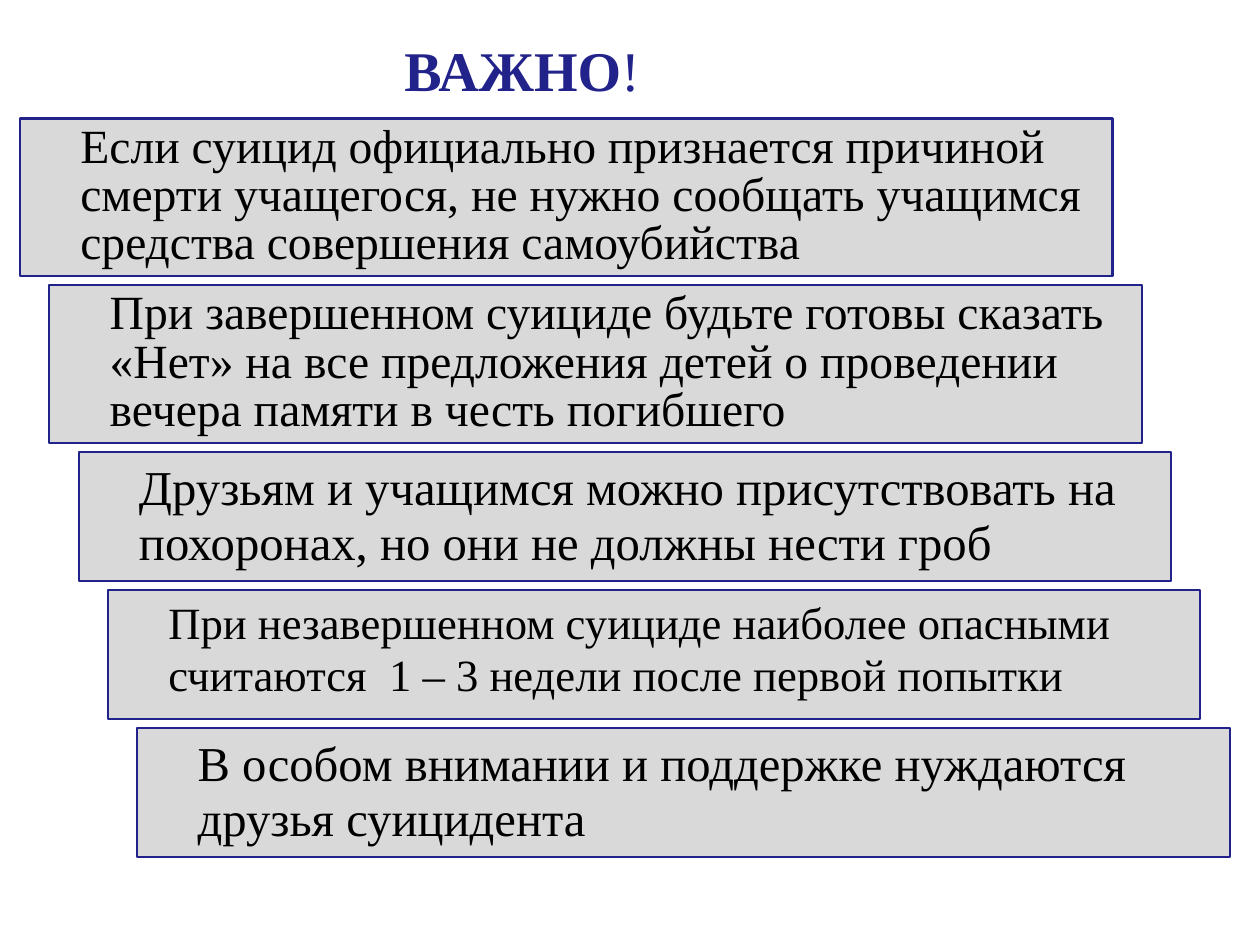
from lxml.etree import SubElement
from pptx import Presentation
from pptx.dml.color import RGBColor
from pptx.enum.shapes import MSO_SHAPE
from pptx.enum.text import MSO_ANCHOR, MSO_AUTO_SIZE, PP_ALIGN
from pptx.oxml.ns import qn
from pptx.util import Inches, Pt

COLORS = {"navy": "22228B", "gray": "CCCCCC", "black": "000000"}
FONT = "Times New Roman"
TITLE = [("ВАЖНО", True), ("!", False)]

# text, height, line spacing, tab size, text size
STEPS = [
    ("Если суицид официально признается причиной смерти учащегося, "
     "не нужно сообщать учащимся средства совершения самоубийства",
     1.25, 0.84, 27.2, 27.2),
    ("При завершенном суициде будьте готовы сказать «Нет» на все "
     "предложения детей о проведении вечера памяти в честь погибшего",
     1.25, 0.84, 27.2, 27.2),
    ("Друзьям и учащимся можно присутствовать на похоронах, "
     "но они не должны нести гроб", 1.02, 0.94, 29.6, 27.8),
    ("При незавершенном суициде наиболее опасными считаются  "
     "1 – 3 недели после первой попытки", 1.02, 0.95, 27.2, 25.5),
    ("В особом внимании и поддержке нуждаются друзья суицидента",
     1.02, 0.94, 29.6, 27.8),
]
FIRST, LAST = (0.16, 0.94), (1.09, 5.78)
WIDTH, INDENT, ALPHA = 8.67, 0.38, 74


def color(name):
    return RGBColor.from_string(COLORS[name])


def add_run(para, text, size, hue, bold=False):
    run = para.add_run()
    run.text = text
    font = run.font
    font.name, font.size, font.bold = FONT, Pt(size), bold
    font.color.rgb = color(hue)


def add_title(slide):
    title = slide.shapes.title
    title.left, title.top = Inches(3.11), Inches(0.23)
    title.width, title.height = Inches(3.15), Inches(0.64)
    frame = title.text_frame
    frame.auto_size = MSO_AUTO_SIZE.NONE
    frame.vertical_anchor = MSO_ANCHOR.TOP
    para = frame.paragraphs[0]
    para.alignment = PP_ALIGN.LEFT
    for text, bold in TITLE:
        add_run(para, text, 32, "navy", bold)


def add_step(slide, left, top, step):
    text, height, spacing, tab, size = step
    box = slide.shapes.add_shape(MSO_SHAPE.RECTANGLE, Inches(left), Inches(top),
                                 Inches(WIDTH), Inches(height))
    box.shadow.inherit = False
    box.fill.solid()
    box.fill.fore_color.rgb = color("gray")
    tint = box.fill._xPr.find(".//" + qn("a:srgbClr"))
    SubElement(tint, qn("a:alpha"), val=str(ALPHA * 1000))
    box.line.color.rgb = color("navy")
    box.line.width = Pt(1.25)
    frame = box.text_frame
    frame.word_wrap = True
    frame.vertical_anchor = MSO_ANCHOR.TOP
    para = frame.paragraphs[0]
    para.alignment = PP_ALIGN.LEFT
    para.line_spacing = spacing
    props = para._p.get_or_add_pPr()
    props.set("marL", str(Inches(INDENT)))
    props.set("indent", str(-Inches(INDENT)))
    add_run(para, "\t", tab, "black")
    add_run(para, text, size, "black")


def main():
    prs = Presentation()
    prs.slide_width, prs.slide_height = Inches(10), Inches(7.5)
    slide = prs.slides.add_slide(prs.slide_layouts[5])
    add_title(slide)
    count = len(STEPS) - 1
    shift = (LAST[0] - FIRST[0]) / count
    gap = (LAST[1] - FIRST[1] - sum(step[1] for step in STEPS[:-1])) / count
    left, top = FIRST
    for step in STEPS:
        add_step(slide, left, top, step)
        left += shift
        top += step[1] + gap
    prs.save("out.pptx")


if __name__ == "__main__":
    main()
